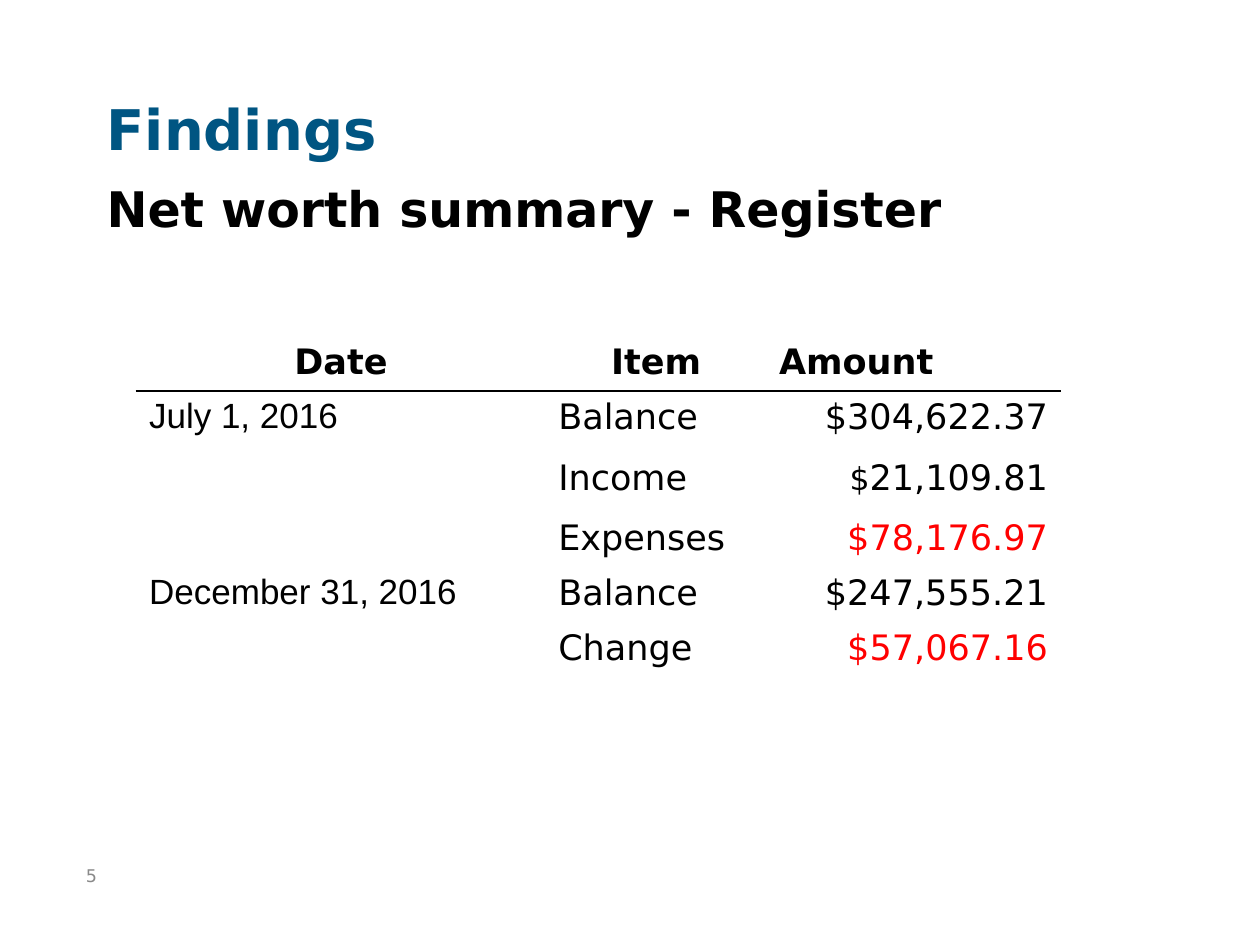
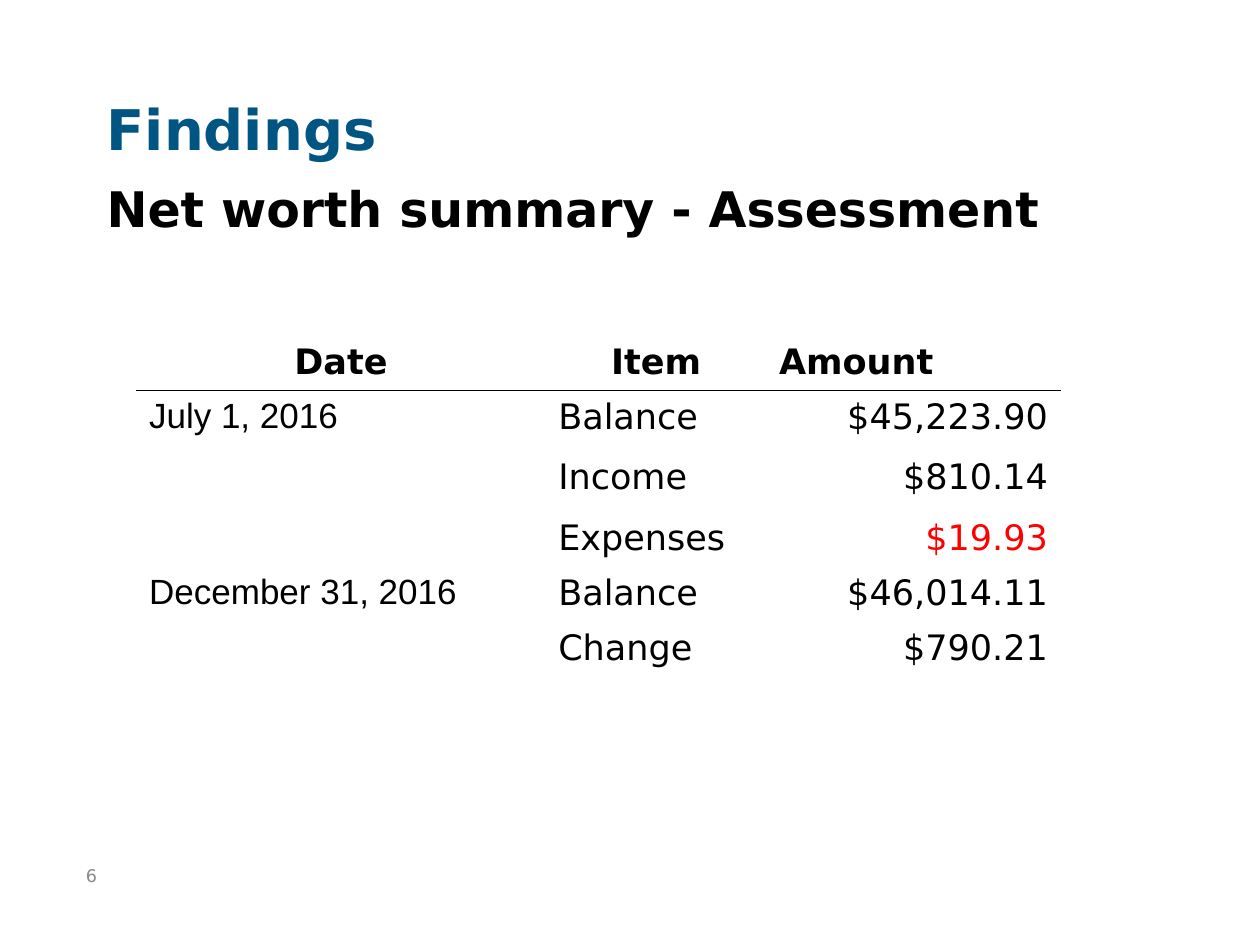
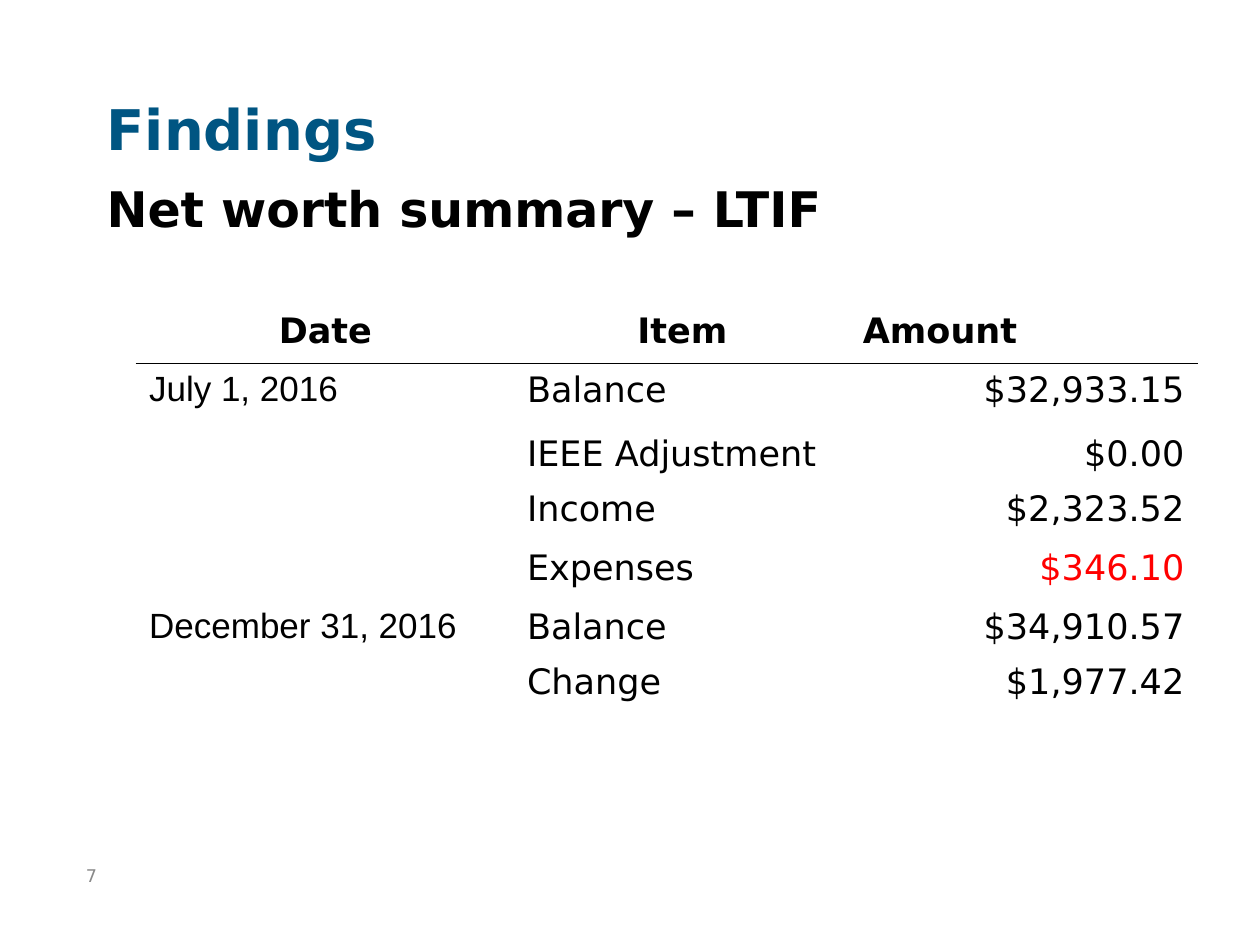
from lxml import etree
from pptx import Presentation
from pptx.dml.color import RGBColor
from pptx.enum.text import MSO_ANCHOR, PP_ALIGN
from pptx.oxml.ns import qn
from pptx.util import Cm, Pt

LEFT, CENTER, RIGHT = PP_ALIGN.LEFT, PP_ALIGN.CENTER, PP_ALIGN.RIGHT
TOP, MIDDLE = MSO_ANCHOR.TOP, MSO_ANCHOR.MIDDLE

COLORS = {"title": "005582", "text": "000000", "loss": "FF0000", "number": "898989"}
FONT, DATE_FONT = "DejaVu Sans", "Arial"
TABLE_SIZE = 20
TABLE_LEFT = 2.75

TITLE = "Findings"
HEADINGS = [("Date", CENTER), ("Item", CENTER), ("Amount", LEFT)]
START, END = "July 1, 2016", "December 31, 2016"
FIRST_NUMBER = 5

# Each entry: date, item, amount, colour of the amount
FUNDS = [
    {
        "subtitle": "Net worth summary - Register",
        "top": 6.77,
        "columns": [8.25, 4.45, 5.93],
        "heights": [1.11, 1.22, 1.22, 1.11, 1.11, 1.11],
        "small_sign": "Income",
        "entries": [
            (START, "Balance", "$304,622.37", "text"),
            ("", "Income", "$21,109.81", "text"),
            ("", "Expenses", "$78,176.97", "loss"),
            (END, "Balance", "$247,555.21", "text"),
            ("", "Change", "$57,067.16", "loss"),
        ],
    },
    {
        "subtitle": "Net worth summary - Assessment",
        "top": 6.77,
        "columns": [8.25, 4.45, 5.93],
        "heights": [1.09, 1.22, 1.22, 1.11, 1.11, 1.11],
        "entries": [
            (START, "Balance", "$45,223.90", "text"),
            ("", "Income", "$810.14", "text"),
            ("", "Expenses", "$19.93", "loss"),
            (END, "Balance", "$46,014.11", "text"),
            ("", "Change", "$790.21", "text"),
        ],
    },
    {
        "subtitle": "Net worth summary – LTIF",
        "top": 6.14,
        "columns": [7.62, 6.77, 6.99],
        "heights": [1.19, 1.3, 1.09, 1.19, 1.19, 1.11, 1.19],
        "entries": [
            (START, "Balance", "$32,933.15", "text"),
            ("", "IEEE Adjustment", "$0.00", "text"),
            ("", "Income", "$2,323.52", "text"),
            ("", "Expenses", "$346.10", "loss"),
            (END, "Balance", "$34,910.57", "text"),
            ("", "Change", "$1,977.42", "text"),
        ],
    },
]


def add_run(paragraph, text, size, color="text", bold=False, font=FONT):
    run = paragraph.add_run()
    run.text = text
    run.font.name = font
    run.font.size = Pt(size)
    run.font.bold = bold
    run.font.color.rgb = RGBColor.from_string(COLORS[color])


def add_line(slide, box, text, size, color="text", bold=False, anchor=TOP):
    """Add a text box that holds one line of text."""
    frame = slide.shapes.add_textbox(*map(Cm, box)).text_frame
    frame.word_wrap = True
    frame.vertical_anchor = anchor
    if anchor == TOP:
        frame.margin_top = Cm(0.2)
    add_run(frame.paragraphs[0], text, size, color, bold)


def rule_cell(cell, side):
    """Draw a thin black border on one side of a cell."""
    border = etree.Element(qn(f"a:ln{side}"), w=str(Pt(1)))
    fill = etree.SubElement(border, qn("a:solidFill"))
    etree.SubElement(fill, qn("a:srgbClr"), val=COLORS["text"])
    cell._tc.get_or_add_tcPr().insert(0, border)


def add_summary(slide, fund):
    columns, heights = fund["columns"], fund["heights"]
    table = slide.shapes.add_table(
        len(heights), len(columns), Cm(TABLE_LEFT), Cm(fund["top"]),
        Cm(sum(columns)), Cm(sum(heights))).table
    table.first_row = table.horz_banding = False
    for column, width in zip(table.columns, columns):
        column.width = Cm(width)
    for row, height in zip(table.rows, heights):
        row.height = Cm(height)
    for cell in table.iter_cells():
        cell.fill.background()

    for c, (heading, align) in enumerate(HEADINGS):
        paragraph = table.cell(0, c).text_frame.paragraphs[0]
        paragraph.alignment = align
        add_run(paragraph, heading, TABLE_SIZE, bold=True)
        rule_cell(table.cell(0, c), "B")
        rule_cell(table.cell(1, c), "T")

    for r, (date, item, amount, color) in enumerate(fund["entries"], start=1):
        date_line, item_line, amount_line = (
            table.cell(r, c).text_frame.paragraphs[0] for c in range(3))
        if date:
            add_run(date_line, date, TABLE_SIZE, font=DATE_FONT)
        add_run(item_line, item, TABLE_SIZE)
        amount_line.alignment = RIGHT
        if item == fund.get("small_sign"):
            add_run(amount_line, amount[0], 18, color)
            amount = amount[1:]
        add_run(amount_line, amount, TABLE_SIZE, color)


def main():
    prs = Presentation()
    prs.slide_width, prs.slide_height = Cm(25.4), Cm(19.05)
    for number, fund in enumerate(FUNDS, start=FIRST_NUMBER):
        slide = prs.slides.add_slide(prs.slide_layouts[6])
        add_line(slide, (1.9, 1.7, 21.6, 1.7), TITLE, 32, "title", bold=True)
        add_line(slide, (1.9, 3.4, 21.6, 1.7), fund["subtitle"], 28, bold=True)
        add_line(slide, (1.48, 17.15, 1.9, 1), str(number), 10, "number", anchor=MIDDLE)
        add_summary(slide, fund)
    prs.save("out.pptx")


if __name__ == "__main__":
    main()
